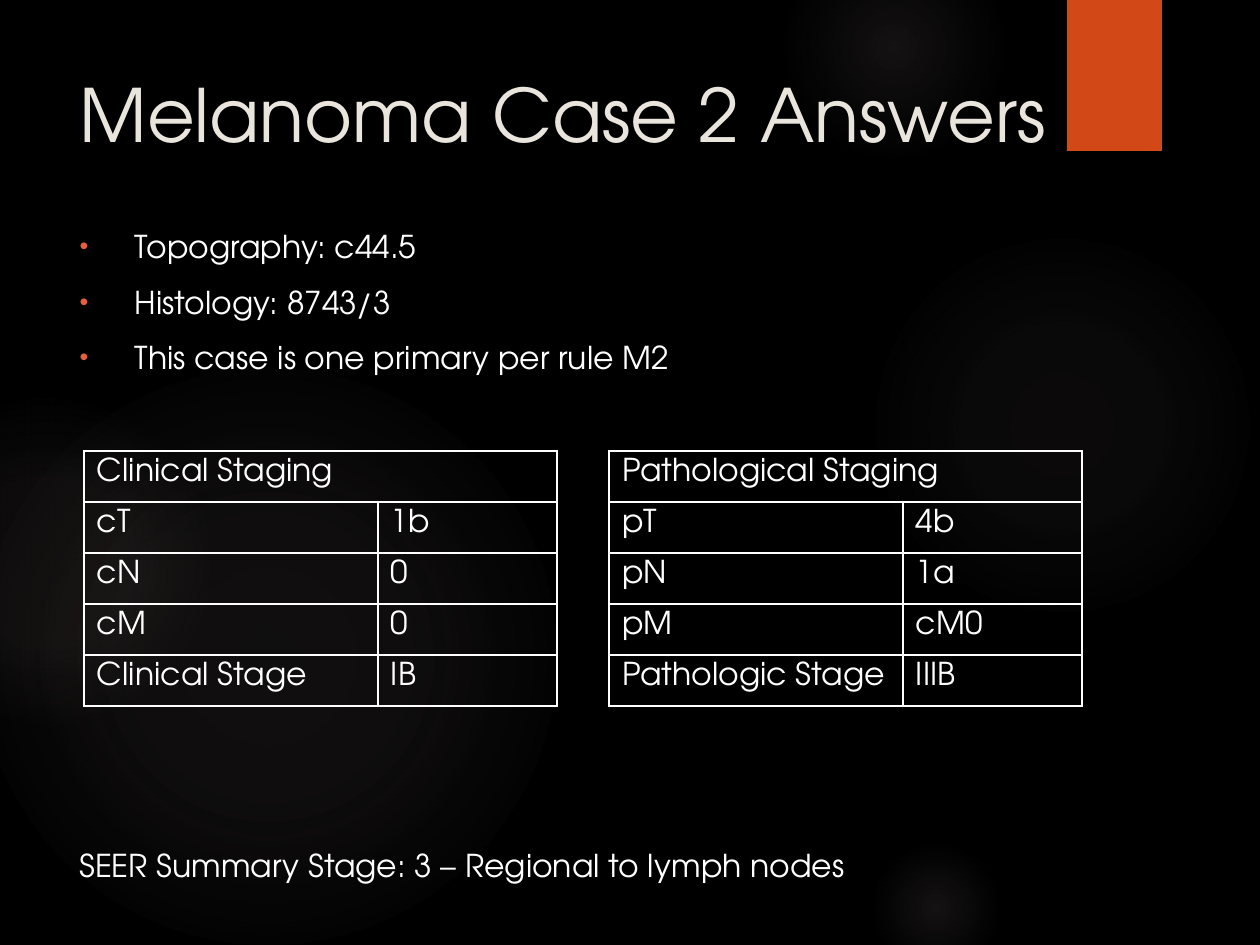
from dataclasses import dataclass
from pptx import Presentation
from pptx.dml.color import RGBColor
from pptx.enum.shapes import MSO_SHAPE
from pptx.enum.text import MSO_ANCHOR, MSO_AUTO_SIZE, PP_ALIGN
from pptx.oxml import parse_xml
from pptx.oxml.ns import nsdecls
from pptx.util import Pt

OVAL, RECT = MSO_SHAPE.OVAL, MSO_SHAPE.RECTANGLE
TOP, LEFT, FIXED = MSO_ANCHOR.TOP, PP_ALIGN.LEFT, MSO_AUTO_SIZE.NONE
NS = nsdecls("a")
SCALE = 914400 / 126


@dataclass(frozen=True)
class Theme:
    font: str = "TeX Gyre Adventor"
    title_size: int = 42
    text_size: int = 18
    back: str = "000000"
    title: str = "E9E5DC"
    text: str = "FFFFFF"
    glow: str = "918485"
    tab: str = "D34817"
    bullet: str = "E45F3C"


@dataclass(frozen=True)
class Glow:
    x: int
    y: int
    size: int
    stops: tuple  # (position %, opacity %)


@dataclass(frozen=True)
class Stage:
    x: int
    head: str
    rows: tuple


THEME = Theme()
GLOWS = (
    Glow(868, 231, 388, ((0, 7), (36, 6), (69, 0))),
    Glow(784, -63, 220, ((0, 14), (36, 7), (73, 0))),
    Glow(868, 840, 136, ((0, 14), (36, 7), (66, 0))),
    Glow(-21, 368, 577, ((0, 11), (36, 10), (75, 0))),
    Glow(-116, 399, 325, ((0, 8), (36, 8), (72, 0))),
)
STAGES = (
    Stage(84, "Clinical Staging",
          (("cT", "1b"), ("cN", "0"), ("cM", "0"), ("Clinical Stage", "IB"))),
    Stage(609, "Pathological Staging",
          (("pT", "4b"), ("pN", "1a"), ("pM", "cM0"),
           ("Pathologic Stage", "IIIB"))),
)
FACTS = ("Topography: c44.5", "Histology: 8743/3",
         "This case is one primary per rule M2")
COLS, ROW, TABLE_Y = (294, 179), 51, 451


def px(n: int) -> int:
    return round(n * SCALE)


def place(shape, x: int, y: int, w: int, h: int) -> None:
    shape.left, shape.top, shape.width, shape.height = map(px, (x, y, w, h))


def write(para, text: str, size: int = THEME.text_size,
          color: str = THEME.text) -> None:
    para.alignment = LEFT
    run = para.add_run()
    run.text = text
    run.font.name, run.font.size = THEME.font, Pt(size)
    run.font.color.rgb = RGBColor.from_string(color)


def set_frame(frame) -> None:
    frame.word_wrap = True
    frame.auto_size = FIXED
    frame.vertical_anchor = TOP


def add_plain(slide, kind, x: int, y: int, w: int, h: int):
    shape = slide.shapes.add_shape(kind, *map(px, (x, y, w, h)))
    shape.shadow.inherit = False
    shape.line.fill.background()
    return shape


def add_glow(slide, glow: Glow) -> None:
    shape = add_plain(slide, OVAL, glow.x, glow.y, glow.size, glow.size)
    stops = "".join(
        f'<a:gs pos="{pos * 1000}"><a:srgbClr val="{THEME.glow}">'
        f'<a:alpha val="{alpha * 1000}"/></a:srgbClr></a:gs>'
        for pos, alpha in glow.stops)
    fill = parse_xml(
        f'<a:gradFill {NS}><a:gsLst>{stops}</a:gsLst><a:path path="circle">'
        '<a:fillToRect l="50000" t="50000" r="50000" b="50000"/>'
        '</a:path></a:gradFill>')
    shape._element.spPr.find("{*}prstGeom").addnext(fill)


def add_bullet(para) -> None:
    props = para._p.get_or_add_pPr()
    props.set("marL", str(px(55)))
    props.set("indent", str(px(-55)))
    for tag in (f'<a:buClr {NS}><a:srgbClr val="{THEME.bullet}"/></a:buClr>',
                f'<a:buSzPct {NS} val="79000"/>',
                f'<a:buFont {NS} typeface="Arial"/>',
                f'<a:buChar {NS} char="•"/>',
                f'<a:tabLst {NS}><a:tab pos="{px(54)}" algn="l"/></a:tabLst>'):
        props.append(parse_xml(tag))


def style_cell(cell) -> None:
    cell.fill.background()
    cell.vertical_anchor = TOP
    cell.margin_left, cell.margin_right = px(13), px(12)
    cell.margin_top, cell.margin_bottom = px(7), px(4)
    props = cell._tc.get_or_add_tcPr()
    for i, side in enumerate("LRTB"):
        props.insert(i, parse_xml(
            f'<a:ln{side} {NS} w="12700"><a:solidFill>'
            f'<a:srgbClr val="{THEME.text}"/></a:solidFill></a:ln{side}>'))


def add_stage(slide, stage: Stage) -> None:
    rows = ((stage.head, ""),) + stage.rows
    box = map(px, (stage.x, TABLE_Y, sum(COLS), ROW * len(rows)))
    table = slide.shapes.add_table(len(rows), len(COLS), *box).table
    table.first_row = table.horz_banding = False
    for col, width in zip(table.columns, COLS):
        col.width = px(width)
    for r, row in enumerate(rows):
        table.rows[r].height = px(ROW)
        for c, text in enumerate(row):
            cell = table.cell(r, c)
            style_cell(cell)
            if text:
                write(cell.text_frame.paragraphs[0], text)
    table.cell(0, 0).merge(table.cell(0, 1))


def add_facts(body) -> None:
    place(body, 67, 221, 1120, 189)
    frame = body.text_frame
    set_frame(frame)
    for i, fact in enumerate(FACTS):
        para = frame.add_paragraph() if i else frame.paragraphs[0]
        para.level = 1
        para.space_before = Pt(10)
        write(para, fact)
        add_bullet(para)


def main() -> None:
    deck = Presentation()
    deck.slide_width, deck.slide_height = px(1260), px(945)
    slide = deck.slides.add_slide(deck.slide_layouts[1])
    back = slide.background.fill
    back.solid()
    back.fore_color.rgb = RGBColor.from_string(THEME.back)

    title, body = slide.placeholders
    tree = slide.shapes._spTree
    for glow in GLOWS:
        add_glow(slide, glow)
    tab = add_plain(slide, RECT, 1067, 0, 95, 151)
    tab.fill.solid()
    tab.fill.fore_color.rgb = RGBColor.from_string(THEME.tab)
    for holder in (title, body):  # bring the text in front of the backdrop
        tree.append(holder._element)

    place(title, 67, 63, 994, 193)
    set_frame(title.text_frame)
    title.text_frame.margin_right = 0
    write(title.text_frame.paragraphs[0], "Melanoma Case 2 Answers",
          THEME.title_size, THEME.title)
    add_facts(body)
    for stage in STAGES:
        add_stage(slide, stage)

    note = slide.shapes.add_textbox(*map(px, (67, 840, 924, 50)))
    set_frame(note.text_frame)
    write(note.text_frame.paragraphs[0],
          "SEER Summary Stage: 3 – Regional to lymph nodes")
    deck.save("out.pptx")


if __name__ == "__main__":
    main()
